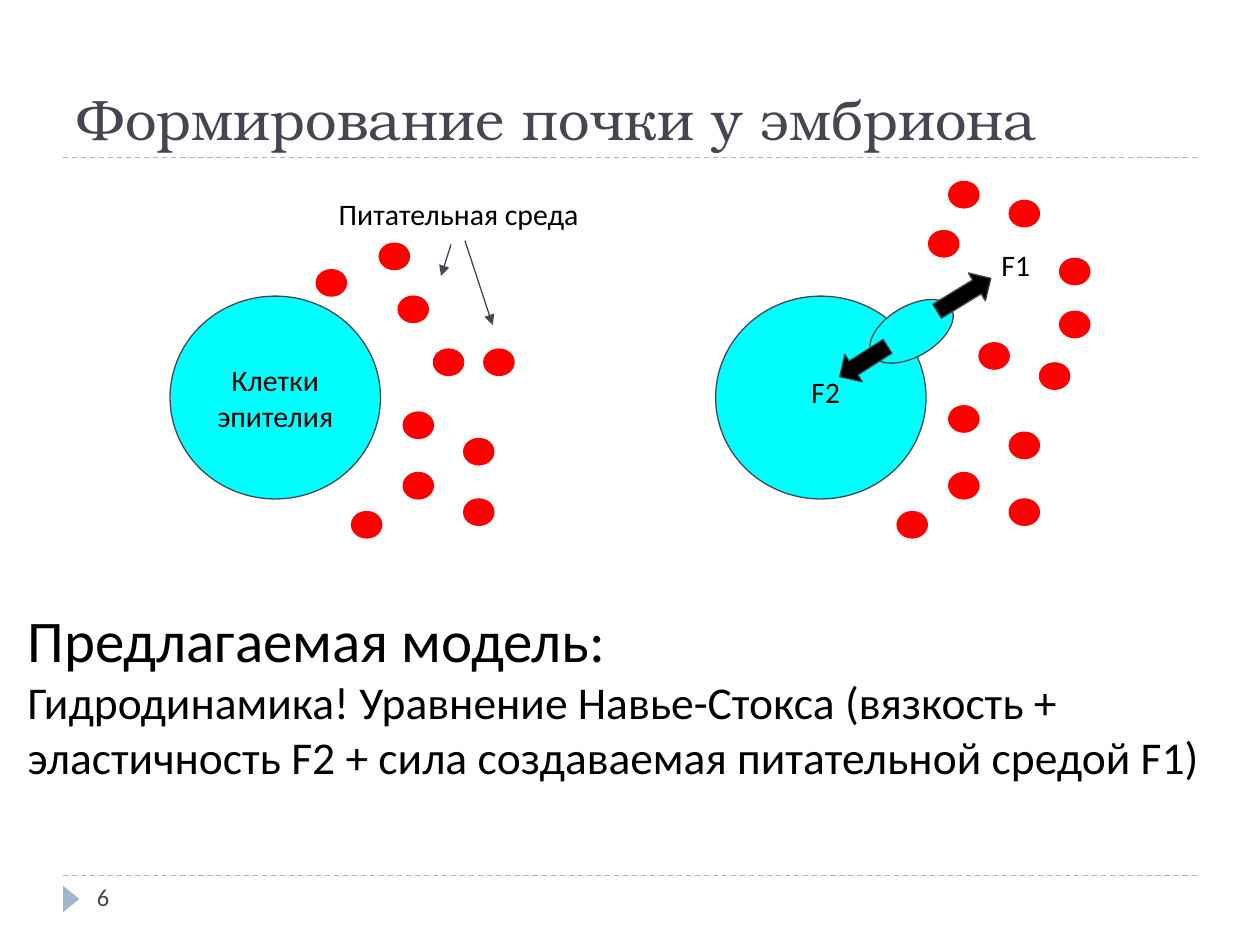
from lxml import etree
from pptx import Presentation
from pptx.dml.color import RGBColor
from pptx.enum.dml import MSO_LINE
from pptx.enum.shapes import MSO_CONNECTOR, MSO_SHAPE
from pptx.enum.text import MSO_ANCHOR, PP_ALIGN
from pptx.oxml.ns import qn
from pptx.util import Pt

PX = 9144
OVAL, ARROW, WEDGE = MSO_SHAPE.OVAL, MSO_SHAPE.LEFT_ARROW, MSO_SHAPE.ISOSCELES_TRIANGLE
STRAIGHT, DASH = MSO_CONNECTOR.STRAIGHT, MSO_LINE.DASH
TOP, MIDDLE, BOTTOM = MSO_ANCHOR.TOP, MSO_ANCHOR.MIDDLE, MSO_ANCHOR.BOTTOM
LEFT, CENTER = PP_ALIGN.LEFT, PP_ALIGN.CENTER
SANS, SERIF = "Calibri", "TeX Gyre Bonum"
INK, BLACK, CYAN, RED, BLUE = "464653", "000000", "00FFFF", "FF0000", "9FB8CD"

SHIFT = 433
SHARED = [(320, 375), (279, 406), (368, 396)]
NEAR = [(344, 277), (320, 327), (368, 348)]
LEFT_DOTS = [(301, 193), (251, 214), (316, 235), (384, 277)] + NEAR + SHARED
RIGHT_DOTS = [(825, 288), (841, 247), (841, 205), (737, 183), (801, 159), (753, 144)]
RIGHT_DOTS += [(x + SHIFT, y - 5) for x, y in NEAR] + [(x + SHIFT, y) for x, y in SHARED]


def color(code):
    """Turn a hex string into a colour."""
    return RGBColor.from_string(code)


def scale(*sizes):
    """Turn px into EMU."""
    return [size * PX for size in sizes]


def write(shape, lines, size, font=SANS, ink=BLACK, align=LEFT, anchor=TOP, pad=10):
    """Fill a shape with one paragraph per line and return its frame."""
    frame = shape.text_frame
    frame.word_wrap = True
    frame.vertical_anchor = anchor
    frame.margin_left = frame.margin_right = 10 * PX
    frame.margin_top = frame.margin_bottom = pad * PX
    frame.text = "\n".join(lines)
    for para in frame.paragraphs:
        para.alignment = align
        para.font.size = Pt(size)
        para.font.name = font
        para.font.color.rgb = color(ink)
    return frame


def label(slide, box, text, size, **style):
    """Add a text box with one line of text."""
    return write(slide.shapes.add_textbox(*scale(*box)), [text], size, **style)


def solid(slide, kind, box, fill, line=INK, turn=0):
    """Add a filled and outlined shape."""
    shape = slide.shapes.add_shape(kind, *scale(*box))
    shape.shadow.inherit = False
    shape.rotation = turn
    shape.fill.solid()
    shape.fill.fore_color.rgb = color(fill)
    if line:
        shape.line.color.rgb = color(line)
        shape.line.width = Pt(0.75)
    else:
        shape.line.fill.background()
    return shape


def stroke(slide, ends, ink):
    """Add a thin straight line."""
    link = slide.shapes.add_connector(STRAIGHT, *scale(*ends))
    link.line.color.rgb = color(ink)
    link.line.width = Pt(0.75)
    etree.SubElement(link._element.spPr, qn("a:effectLst"))
    return link


def rule(slide, y):
    """Add a dashed line across the slide."""
    stroke(slide, (50, y, 950, y), BLUE).line.dash_style = DASH


def pointer(slide, ends):
    """Add a line with an arrowhead at its end."""
    line = stroke(slide, ends, INK).line
    etree.SubElement(line._get_or_add_ln(), qn("a:tailEnd"), type="triangle")


def frame_page(slide):
    """Add the title, the rules and the page number."""
    rule(slide, 695)
    rule(slide, 125)
    solid(slide, WEDGE, (46, 707, 21, 13), BLUE, None, 90)
    label(slide, (50, 17, 900, 108), "Формирование почки у эмбриона", 32,
          font=SERIF, ink=INK, anchor=BOTTOM, pad=5)
    label(slide, (67, 695, 217, 40), "6", 14, ink=INK, pad=5)


def model(slide):
    """Add the text on the proposed model."""
    frame = label(slide, (12, 474, 975, 175), "Предлагаемая модель:", 26, pad=5)
    para = frame.paragraphs[0]
    para.space_before = Pt(6)
    para.runs[0].font.size = Pt(33.7)
    para.add_line_break()
    para.add_run().text = ("Гидродинамика! Уравнение Навье-Cтокса (вязкость + эластичность F2"
                           " + сила создаваемая питательной средой F1)")


def cells(slide):
    """Add both cells, the dots around them and the forces."""
    for x, y in LEFT_DOTS + RIGHT_DOTS:
        solid(slide, OVAL, (x, y, 24, 21), RED, RED)
    cell = solid(slide, OVAL, (135, 235, 167, 161), CYAN)
    write(cell, ["Клетки", "эпителия"], 17, align=CENTER, anchor=MIDDLE)
    solid(slide, OVAL, (135 + SHIFT, 235, 167, 161), CYAN)
    solid(slide, OVAL, (687, 243, 73, 40), CYAN, turn=329.6)
    solid(slide, ARROW, (663, 274, 45, 26), BLACK, turn=327.5)
    solid(slide, ARROW, (740, 221, 50, 26), BLACK, turn=148.5)
    label(slide, (259, 145, 217, 49), "Питательная среда", 17)
    label(slide, (785, 186, 56, 40), "F1", 17)
    label(slide, (634, 287, 56, 40), "F2", 17)
    pointer(slide, (358, 194, 350, 219))
    pointer(slide, (369, 191, 391, 258))


def main():
    """Build and save the slide."""
    deck = Presentation()
    deck.slide_width, deck.slide_height = scale(1000, 750)
    slide = deck.slides.add_slide(deck.slide_layouts[6])
    frame_page(slide)
    model(slide)
    cells(slide)
    deck.save("out.pptx")


if __name__ == "__main__":
    main()
